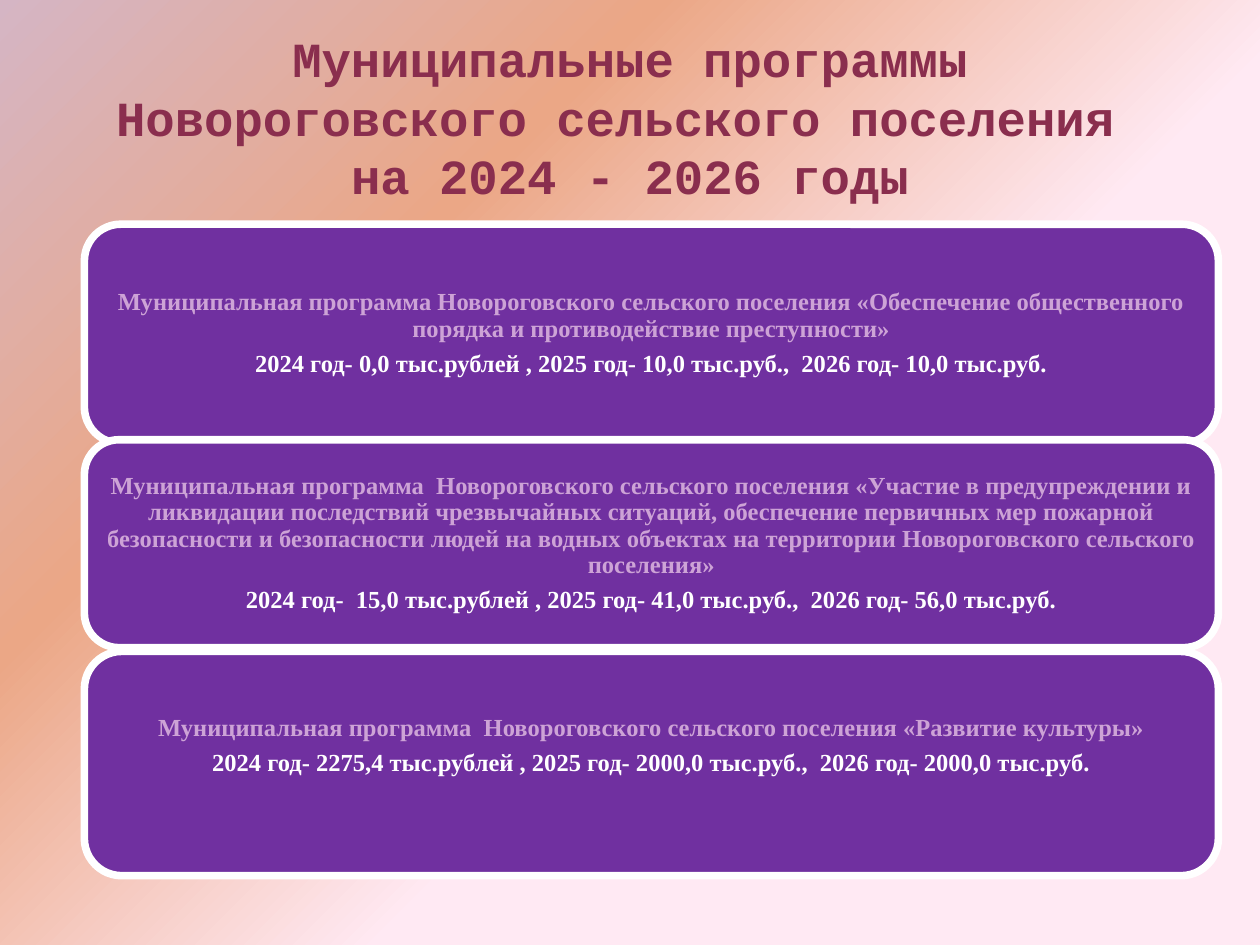
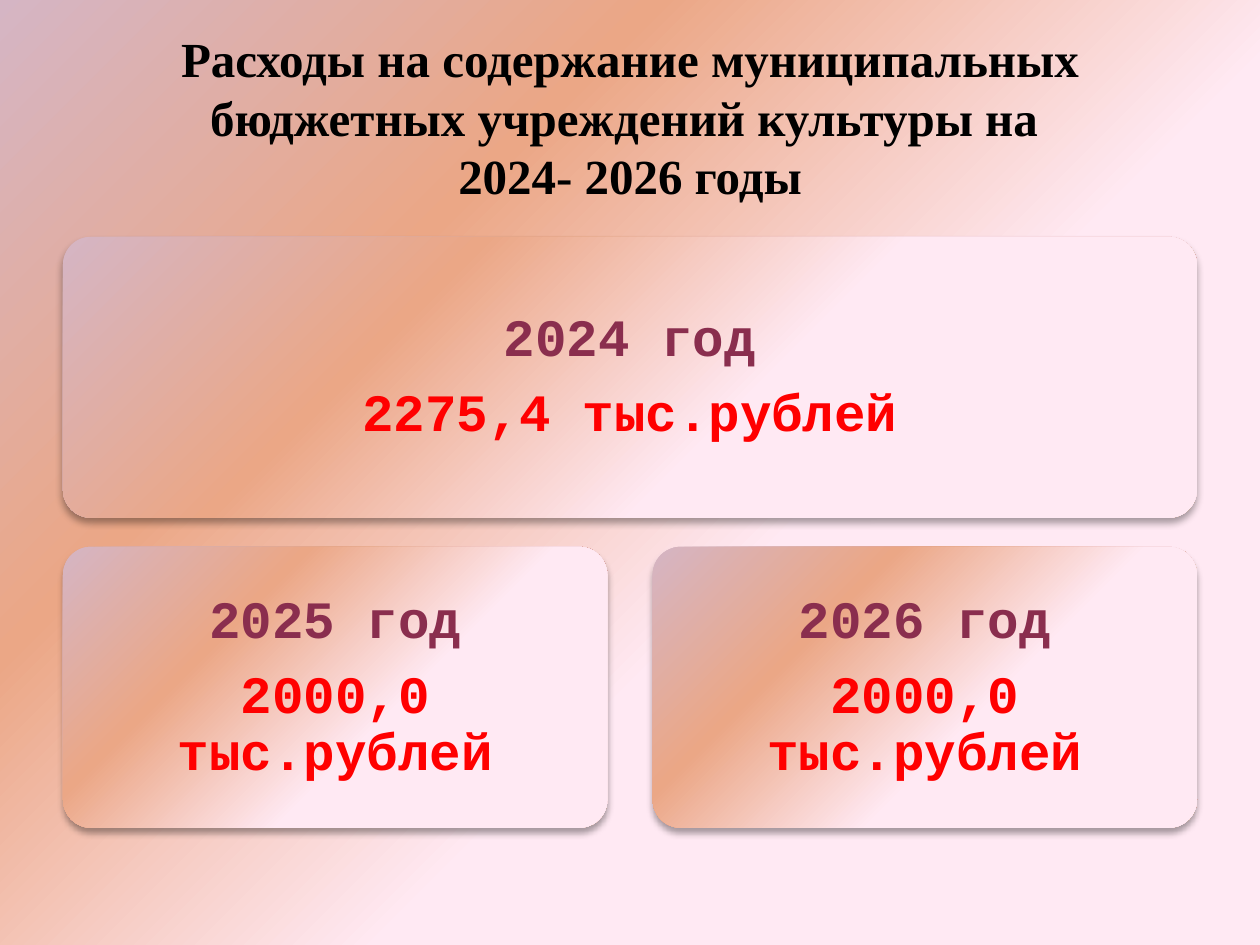
from dataclasses import dataclass

from lxml import etree
from pptx import Presentation
from pptx.dml.color import RGBColor
from pptx.enum.shapes import MSO_SHAPE
from pptx.enum.text import MSO_ANCHOR, MSO_AUTO_SIZE, PP_ALIGN
from pptx.oxml import parse_xml
from pptx.util import Inches, Pt

ROUNDED = MSO_SHAPE.ROUNDED_RECTANGLE
MIDDLE = MSO_ANCHOR.MIDDLE
CENTER = PP_ALIGN.CENTER
NO_AUTOFIT = MSO_AUTO_SIZE.NONE
DRAWING = "http://schemas.openxmlformats.org/drawingml/2006/main"


@dataclass(frozen=True)
class Theme:
    serif: str = "Times New Roman"
    mono: str = "Courier New"
    wine: str = "8A2E4E"
    black: str = "000000"
    white: str = "FFFFFF"
    red: str = "FF0000"
    purple: str = "7030A0"
    lilac: str = "CDA3D6"
    gradient: tuple = ((40, "FFE9F3"), (70, "EBA786"), (100, "D5B5C4"))
    title_size: float = 28
    program_size: float = 14
    year_size: float = 30


theme = Theme()


def add_text(frame, lines, colors, font, size, spacing=1.0, after=0, inset=0.1):
    """Write one centred bold paragraph per line, each in its own colour."""
    frame.word_wrap = True
    frame.auto_size = NO_AUTOFIT
    frame.vertical_anchor = MIDDLE
    frame.margin_left = frame.margin_right = Inches(inset)
    frame.margin_top = frame.margin_bottom = Inches(inset)
    for index, (line, color) in enumerate(zip(lines, colors)):
        paragraph = frame.add_paragraph() if index else frame.paragraphs[0]
        paragraph.alignment = CENTER
        paragraph.line_spacing = spacing
        paragraph.space_before = Pt(0)
        paragraph.space_after = Pt(after)
        run = paragraph.add_run()
        run.text = line
        run.font.name = font
        run.font.size = Pt(size)
        run.font.bold = True
        run.font.color.rgb = RGBColor.from_string(color)


def paint_gradient(fill, element):
    """Fill with the theme's circular gradient, centred on the lower right corner."""
    fill.gradient()
    old_gradient = next(element.iter(f"{{{DRAWING}}}gradFill"))
    stops = "".join(
        f'<a:gs pos="{position * 1000}"><a:srgbClr val="{color}"/></a:gs>'
        for position, color in theme.gradient
    )
    new_gradient = parse_xml(
        f'<a:gradFill xmlns:a="{DRAWING}" rotWithShape="1"><a:gsLst>{stops}</a:gsLst>'
        '<a:path path="circle"><a:fillToRect l="100000" t="100000"/></a:path></a:gradFill>'
    )
    old_gradient.getparent().replace(old_gradient, new_gradient)


presentation = Presentation()
presentation.slide_width = Inches(10)
presentation.slide_height = Inches(7.5)

# Shared background
master = presentation.slide_master
paint_gradient(master.background.fill, master.element)

# Slides and their titles
titles = [
    (["Муниципальные программы Новороговского сельского поселения ",
      "на 2024 - 2026 годы"], theme.wine, theme.mono),
    (["Расходы на содержание муниципальных бюджетных учреждений культуры на ",
      "2024- 2026 годы"], theme.black, theme.serif),
]
slides = []
for lines, color, font in titles:
    slide = presentation.slides.add_slide(presentation.slide_layouts[5])
    title = slide.shapes.title
    title.left, title.top = Inches(0.5), Inches(0.3)
    title.width, title.height = Inches(9), Inches(1.25)
    add_text(title.text_frame, lines, [color] * len(lines), font, theme.title_size)
    slides.append(slide)
programs_slide, culture_slide = slides

# Slide 1: municipal programmes
programs = [
    (1.78, 1.74,
     "Муниципальная программа Новороговского сельского поселения "
     "«Обеспечение общественного порядка и противодействие преступности»",
     "2024 год- 0,0 тыс.рублей , 2025 год- 10,0 тыс.руб.,  2026 год- 10,0 тыс.руб."),
    (3.49, 1.65,
     "Муниципальная программа  Новороговского сельского поселения "
     "«Участие в предупреждении и ликвидации последствий чрезвычайных ситуаций, "
     "обеспечение первичных мер пожарной безопасности и безопасности людей "
     "на водных объектах на территории Новороговского сельского поселения»",
     "2024 год-  15,0 тыс.рублей , 2025 год- 41,0 тыс.руб.,  2026 год- 56,0 тыс.руб."),
    (5.17, 1.78,
     "Муниципальная программа  Новороговского сельского поселения «Развитие культуры»",
     "2024 год- 2275,4 тыс.рублей , 2025 год- 2000,0 тыс.руб.,  2026 год- 2000,0 тыс.руб."),
]
for top, height, program, amounts in programs:
    panel = programs_slide.shapes.add_shape(
        ROUNDED, Inches(0.67), Inches(top), Inches(9), Inches(height))
    panel.shadow.inherit = False
    panel.fill.solid()
    panel.fill.fore_color.rgb = RGBColor.from_string(theme.purple)
    panel.line.color.rgb = RGBColor.from_string(theme.white)
    panel.line.width = Pt(4.33)
    add_text(panel.text_frame, [program, amounts], [theme.lilac, theme.white],
             theme.serif, theme.program_size, spacing=0.9,
             after=0.35 * theme.program_size, inset=0.06)
# The last panel's text sits above the middle
panel.text_frame.margin_bottom = Inches(0.34)

# Slide 2: yearly spending on culture
year_cards = [
    (0.5, 1.88, 9, "2024 год", "2275,4 тыс.рублей"),
    (0.5, 4.34, 4.32, "2025 год", "2000,0 тыс.рублей"),
    (5.18, 4.34, 4.32, "2026 год", "2000,0 тыс.рублей"),
]
for left, top, width, year, amount in year_cards:
    card = culture_slide.shapes.add_shape(
        ROUNDED, Inches(left), Inches(top), Inches(width), Inches(2.23))
    card.adjustments[0] = 0.1
    paint_gradient(card.fill, card.element)
    card.line.fill.background()
    card.shadow.inherit = False
    effects = next(card.element.iter(f"{{{DRAWING}}}effectLst"))
    shadow = etree.SubElement(
        effects, f"{{{DRAWING}}}outerShdw", blurRad=str(Pt(4)), dist=str(Pt(3)),
        dir="5400000", rotWithShape="0")
    shadow_color = etree.SubElement(shadow, f"{{{DRAWING}}}srgbClr", val=theme.black)
    etree.SubElement(shadow_color, f"{{{DRAWING}}}alpha", val="35000")
    add_text(card.text_frame, [year, amount], [theme.wine, theme.red],
             theme.mono, theme.year_size, spacing=0.9,
             after=0.35 * theme.year_size, inset=0.12)

presentation.save("out.pptx")
